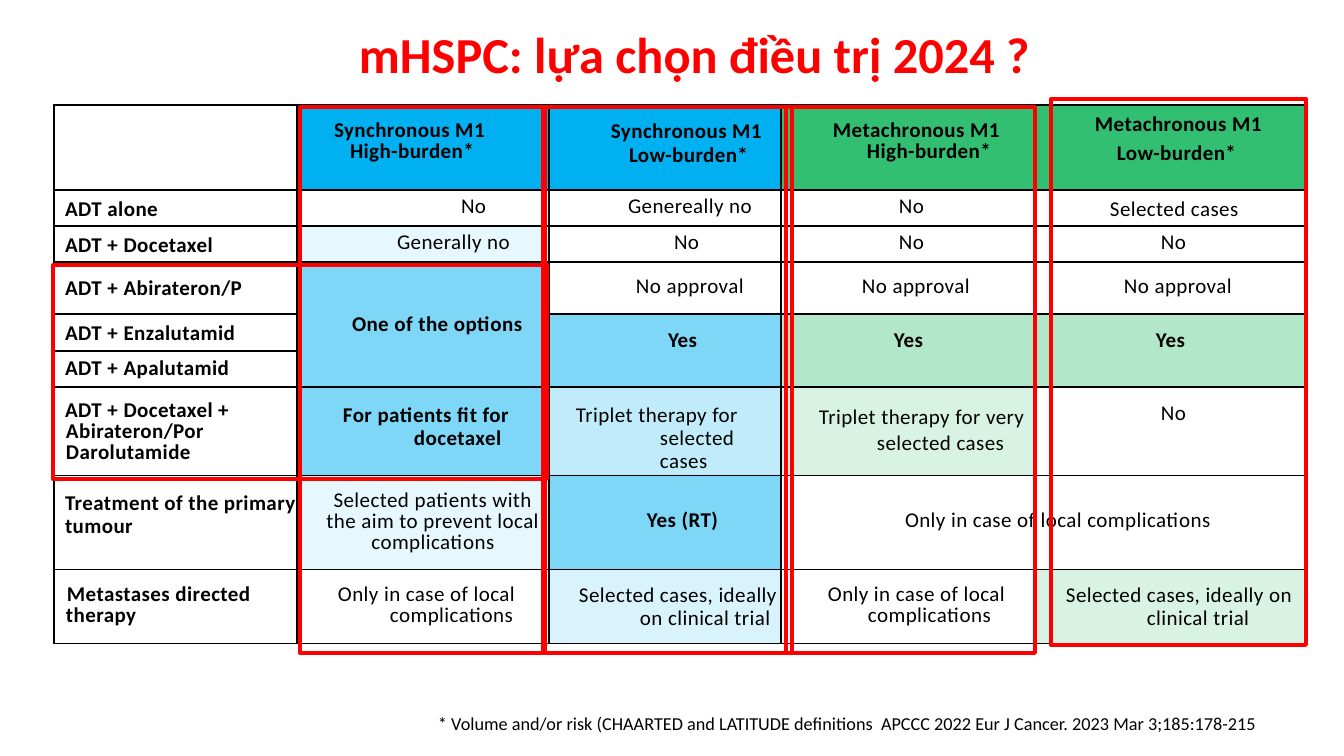
from pptx import Presentation
from pptx.dml.color import RGBColor
from pptx.enum.shapes import MSO_SHAPE
from pptx.enum.text import MSO_ANCHOR, MSO_AUTO_SIZE, PP_ALIGN
from pptx.oxml import parse_xml
from pptx.util import Emu, Pt

PX = 914400 / 100.8
NS = "http://schemas.openxmlformats.org/drawingml/2006/main"


def px(*lengths):
    return [Emu(round(length * PX)) for length in lengths]


def write(frame, text, size=15, color="000000", bold=False, tracking=30,
          first=0, rest=None, pitch=None, align=PP_ALIGN.LEFT):
    """Fill a text frame; first and rest are the indents of its lines, pitch their spacing."""
    frame.word_wrap = True
    rest = first if rest is None else rest
    paragraph = frame.paragraphs[0]
    paragraph.text = text
    paragraph.alignment = align
    if pitch:
        paragraph.line_spacing = px(pitch)[0]
    margin, hanging = px(rest, first - rest)
    properties = paragraph._p.get_or_add_pPr()
    properties.set("marL", str(margin))
    properties.set("indent", str(hanging))
    for run in paragraph.runs:
        run.font.name = "Calibri"
        run.font.size = Pt(size)
        run.font.bold = bold
        run.font.color.rgb = RGBColor.from_string(color)
        run._r.get_or_add_rPr().set("spc", str(tracking))


prs = Presentation()
prs.slide_width, prs.slide_height = px(1344, 756)
slide = prs.slides.add_slide(prs.slide_layouts[5])

title = slide.shapes.title
title.left, title.top, title.width, title.height = px(359, 19, 763, 68)
footnote = slide.shapes.add_textbox(*px(438, 708, 845, 30))
for box in (title, footnote):
    frame = box.text_frame
    frame.margin_left = frame.margin_right = frame.margin_top = frame.margin_bottom = 0
    frame.vertical_anchor = MSO_ANCHOR.MIDDLE
    frame.auto_size = MSO_AUTO_SIZE.NONE
write(title.text_frame, "mHSPC: lựa chọn điều trị 2024 ?",
      size=36, color="FF0000", bold=True, tracking=0)
write(footnote.text_frame,
      "* Volume and/or risk (CHAARTED and LATITUDE definitions  APCCC 2022 "
      "Eur J Cancer. 2023 Mar 3;185:178-215", size=13, tracking=4)

# Treatment options by disease state
column_widths = [243, 252, 232, 254, 271]
row_heights = [85, 36, 36, 52, 37, 36, 89, 94, 74]
options = slide.shapes.add_table(
    len(row_heights), len(column_widths),
    *px(54, 105, sum(column_widths), sum(row_heights))).table
options.first_row = options.horz_banding = False
for column, width in zip(options.columns, px(*column_widths)):
    column.width = width
for row, height in zip(options.rows, px(*row_heights)):
    row.height = height

for cell in options.iter_cells():
    cell.margin_left = cell.margin_right = cell.margin_top = cell.margin_bottom = 0
    for side in "LRTB":
        cell._tc.get_or_add_tcPr().append(parse_xml(
            f'<a:ln{side} xmlns:a="{NS}" w="12700"><a:solidFill>'
            f'<a:srgbClr val="000000"/></a:solidFill></a:ln{side}>'))
    cell.fill.background()

for top, left, bottom, right in [(3, 1, 5, 1), (4, 2, 5, 2), (4, 3, 5, 3),
                                 (4, 4, 5, 4), (7, 3, 7, 4)]:
    options.cell(top, left).merge(options.cell(bottom, right))

SYNC, META = "00B0F0", "32BF72"
SYNC_YES, META_YES = "7FD7F7", "B2E7CA"
bold_fills = {SYNC, META, SYNC_YES, META_YES}

# row, column, text, space above, first indent, other indents, line pitch, fill
entries = [
    (0, 1, "Synchronous M1\vHigh-burden*", 17, 37, 53, 21, SYNC),
    (0, 2, "Synchronous M1\vLow-burden*", 15, 62, 80, 24, SYNC),
    (0, 3, "Metachronous M1\vHigh-burden*", 17, 52, 86, 21, META),
    (0, 4, "Metachronous M1\vLow-burden*", 3, 60, 82, 29, META),
    (1, 0, "ADT alone", 11, 11, 11, 21, None),
    (1, 1, "No", 8, 164, 164, 21, None),
    (1, 2, "Genereally no", 8, 79, 79, 21, None),
    (1, 3, "No", 8, 118, 118, 21, "FFFFFF"),
    (1, 4, "Selected cases", 11, 75, 75, 21, "FFFFFF"),
    (2, 0, "ADT + Docetaxel", 11, 11, 11, 21, None),
    (2, 1, "Generally no", 8, 100, 100, 21, "E6F7FD"),
    (2, 2, "No", 8, 125, 125, 21, None),
    (2, 3, "No", 8, 118, 118, 21, "FFFFFF"),
    (2, 4, "No", 8, 126, 126, 21, "FFFFFF"),
    (3, 0, "ADT + Abirateron/P", 18, 11, 11, 21, None),
    (3, 1, "One of the options", 54, 55, 55, 21, SYNC_YES),
    (3, 2, "No approval", 16, 87, 87, 21, None),
    (3, 3, "No approval", 16, 81, 81, 21, "FFFFFF"),
    (3, 4, "No approval", 16, 89, 89, 21, "FFFFFF"),
    (4, 0, "ADT + Enzalutamid", 11, 11, 11, 21, None),
    (4, 2, "Yes", 18, 119, 119, 21, SYNC_YES),
    (4, 3, "Yes", 18, 113, 113, 21, META_YES),
    (4, 4, "Yes", 18, 121, 121, 21, META_YES),
    (5, 0, "ADT + Apalutamid", 9, 11, 11, 21, None),
    (6, 0, "ADT + Docetaxel +\vAbirateron/Por\vDarolutamide", 15, 11, 12, 21, None),
    (6, 1, "For patients fit for\vdocetaxel", 18, 46, 117, 23, SYNC_YES),
    (6, 2, "Triplet therapy for\vselected\vcases", 18, 27, 111, 23, "BFEBFB"),
    (6, 3, "Triplet therapy for very\vselected cases", 17, 38, 96, 26, "D8F3E4"),
    (6, 4, "No", 18, 126, 126, 21, "FFFFFF"),
    (7, 0, "Treatment of the primary\vtumour", 17, 11, 11, 23, None),
    (7, 1, "Selected patients with\vthe aim to prevent local\vcomplications",
     16, 20, 20, 21, "E6F7FD"),
    (7, 2, "Yes (RT)", 36, 98, 98, 21, SYNC_YES),
    (7, 3, "Only in case of local complications", 36, 124, 124, 21, "FFFFFF"),
    (8, 0, "Metastases directed\vtherapy", 16, 13, 12, 21, None),
    (8, 1, "Only in case of local\vcomplications", 16, 41, 93, 21, None),
    (8, 2, "Selected cases, ideally\von clinical trial", 15, 30, 91, 23, "D8F3FC"),
    (8, 3, "Only in case of local\vcomplications", 16, 47, 87, 21, "FFFFFF"),
    (8, 4, "Selected cases, ideally on\vclinical trial", 15, 31, 112, 23, "D8F3E4"),
]
for row, column, text, above, first, rest, pitch, fill in entries:
    cell = options.cell(row, column)
    cell.margin_top = px(above)[0]
    if fill:
        cell.fill.solid()
        cell.fill.fore_color.rgb = RGBColor.from_string(fill)
    write(cell.text_frame, text, bold=column == 0 or fill in bold_fills,
          first=first, rest=rest, pitch=pitch,
          align=PP_ALIGN.CENTER if (row, column) == (7, 1) else PP_ALIGN.LEFT)

# Red frames around the disease states and the combination therapies
for frame_box in [(300, 107, 245, 546), (53, 265, 494, 214), (543, 107, 249, 546),
                  (786, 107, 249, 546), (1051, 99, 255, 546)]:
    highlight = slide.shapes.add_shape(MSO_SHAPE.RECTANGLE, *px(*frame_box))
    highlight.shadow.inherit = False
    highlight.fill.background()
    highlight.line.color.rgb = RGBColor.from_string("FF0000")
    highlight.line.width = Pt(2.75)

prs.save("out.pptx")
